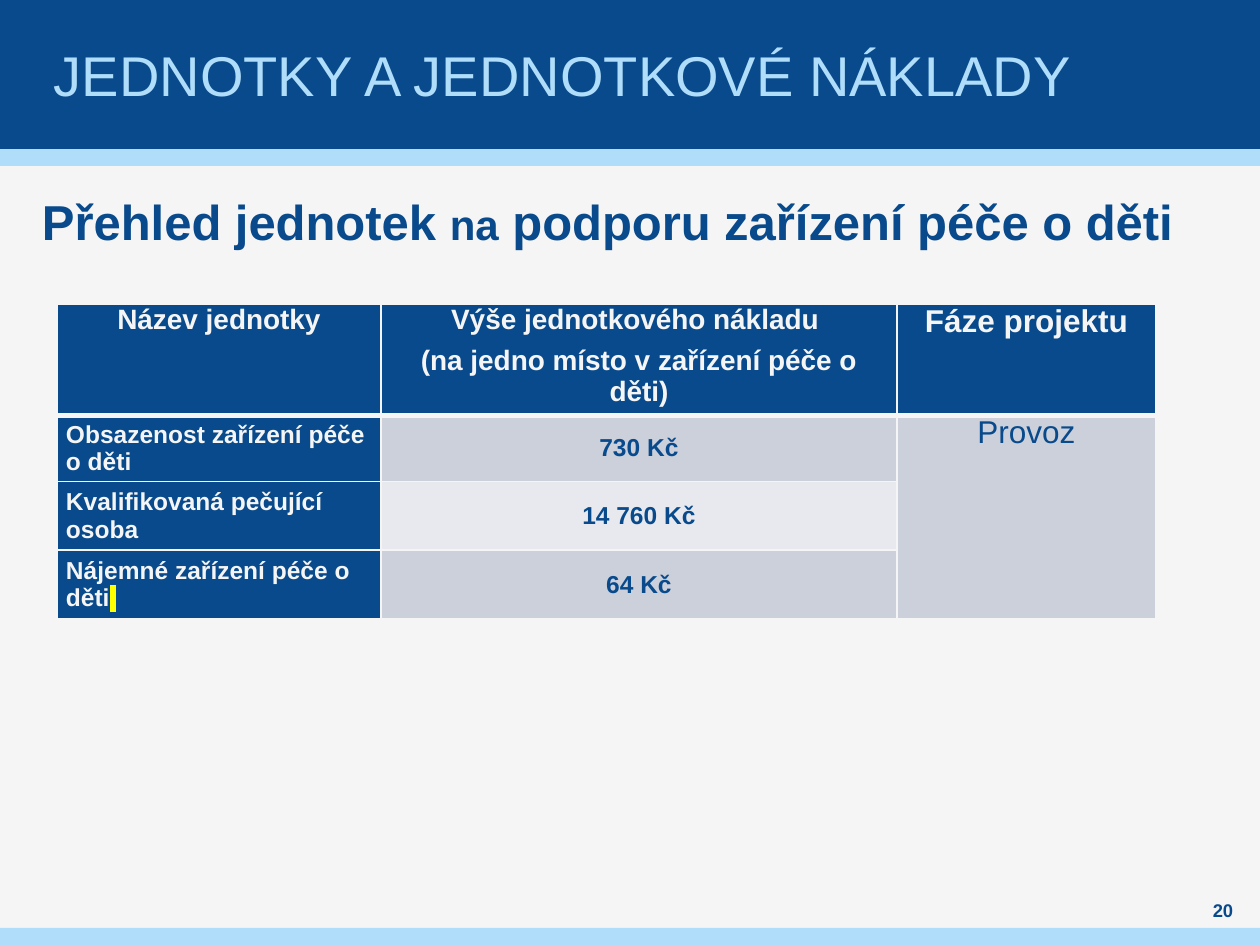
from lxml.etree import SubElement
from pptx import Presentation
from pptx.dml.color import RGBColor
from pptx.enum.shapes import MSO_SHAPE
from pptx.enum.text import MSO_ANCHOR, PP_ALIGN
from pptx.oxml import parse_xml
from pptx.oxml.ns import nsdecls, qn
from pptx.util import Pt

EMU_PER_PX = 914400 / 126
COLORS = {
    "navy": "084A8B",
    "sky": "AFDDFA",
    "paper": "F5F5F5",
    "band": "CCD0DA",
    "pale": "E7E9EE",
    "marker": "FFFF00",
}


def px(length):
    return round(length * EMU_PER_PX)


def rgb(name):
    return RGBColor.from_string(COLORS[name])


class SlideBuilder:
    font_name = "Arial"

    def __init__(self, slide):
        self.slide = slide
        background = slide.background.fill
        background.solid()
        background.fore_color.rgb = rgb("paper")

    def bar(self, left, top, width, height, color):
        bar = self.slide.shapes.add_shape(
            MSO_SHAPE.RECTANGLE, px(left), px(top), px(width), px(height))
        bar.shadow.inherit = False
        bar.fill.solid()
        bar.fill.fore_color.rgb = rgb(color)
        bar.line.fill.background()

    def fill_text(self, frame, paragraphs, align, size, color, bold=False, spacing=0):
        for index, runs in enumerate(paragraphs):
            paragraph = frame.paragraphs[0] if index == 0 else frame.add_paragraph()
            paragraph_format = {"alignment": align, "space_before": Pt(spacing),
                                "space_after": Pt(spacing)}
            for name, value in paragraph_format.items():
                setattr(paragraph, name, value)
            for text, changes in runs:
                run = paragraph.add_run()
                run.text = text
                font_format = {"name": self.font_name, "bold": bold,
                               "size": Pt(changes.get("size", size))}
                for name, value in font_format.items():
                    setattr(run.font, name, value)
                run.font.color.rgb = rgb(color)
                if "highlight" in changes:
                    self.highlight(run, changes["highlight"])

    def highlight(self, run, color):
        mark = parse_xml(
            f'<a:highlight {nsdecls("a")}><a:srgbClr val="{COLORS[color]}"/></a:highlight>')
        run.font._element.find(qn("a:solidFill")).addnext(mark)

    def text(self, left, top, width, height, runs, size, color, align=PP_ALIGN.CENTER,
             bold=True, anchor=MSO_ANCHOR.MIDDLE, inset=0):
        box = self.slide.shapes.add_textbox(px(left), px(top), px(width), px(height))
        frame_format = {"word_wrap": True, "vertical_anchor": anchor,
                        "margin_left": px(inset), "margin_right": px(inset),
                        "margin_top": 0, "margin_bottom": 0}
        for name, value in frame_format.items():
            setattr(box.text_frame, name, value)
        self.fill_text(box.text_frame, [runs], align, size, color, bold)

    def table(self, left, top, columns, rows):
        frame = self.slide.shapes.add_table(
            len(rows), len(columns), px(left), px(top), px(sum(columns)), px(sum(rows)))
        table = frame.table
        table.first_row = table.horz_banding = False
        for column, width in zip(table.columns, columns):
            column.width = px(width)
        for row, height in zip(table.rows, rows):
            row.height = px(height)
        return table

    def borders(self, cell, **widths):
        properties = cell._tc.get_or_add_tcPr()
        for side in "LRTB":
            line = SubElement(properties, qn(f"a:ln{side}"), w=str(Pt(widths.get(side, 1))))
            fill = SubElement(line, qn("a:solidFill"))
            SubElement(fill, qn("a:srgbClr"), val=COLORS["paper"])

    def cell(self, cell, paragraphs, fill, color, size, align=PP_ALIGN.CENTER,
             bold=True, anchor=MSO_ANCHOR.MIDDLE):
        cell_format = {"vertical_anchor": anchor, "margin_left": px(9),
                       "margin_right": px(9), "margin_top": 0, "margin_bottom": 0}
        for name, value in cell_format.items():
            setattr(cell, name, value)
        cell.fill.solid()
        cell.fill.fore_color.rgb = rgb(fill)
        self.fill_text(cell.text_frame, paragraphs, align, size, color, bold, spacing=3)


def main():
    presentation = Presentation()
    presentation.slide_width = px(1260)
    presentation.slide_height = px(945)
    builder = SlideBuilder(presentation.slides.add_slide(presentation.slide_layouts[6]))

    builder.bar(0, 149, 1260, 17, "sky")
    builder.bar(0, 0, 1260, 149, "navy")
    builder.bar(0, 928, 1260, 17, "sky")
    builder.text(49, 0, 1160, 149, [("JEDNOTKY A JEDNOTKOVÉ NÁKLADY", {})], 32, "sky",
                 align=PP_ALIGN.LEFT, bold=False, inset=5)
    builder.text(1191, 898, 64, 25, [("20", {})], 10.5, "navy")
    builder.text(25, 185, 1165, 72,
                 [("Přehled jednotek ", {}), ("na", {"size": 24}),
                  (" podporu zařízení péče o děti", {})], 28, "navy", inset=13)

    headings = [
        ([[("Název jednotky", {})]], 16),
        ([[("Výše jednotkového nákladu ", {})],
          [("(na jedno místo v zařízení péče o děti)", {})]], 16),
        ([[("Fáze projektu", {})]], 18),
    ]
    units = [
        ([("Obsazenost zařízení péče o děti", {})], "730 Kč"),
        ([("Kvalifikovaná pečující osoba", {})], "14 760 Kč"),
        ([("Nájemné zařízení péče o děti", {}), (" ", {"highlight": "marker"})], "64 Kč"),
    ]
    costs = builder.table(57, 304, [324, 516, 259], [110, 66, 69, 69])
    for row in range(len(units) + 1):
        for column in range(len(headings)):
            rule = {0: {"B": 3}, 1: {"T": 3}}.get(row, {})
            builder.borders(costs.cell(row, column), **rule)
    for column, (heading, size) in enumerate(headings):
        builder.cell(costs.cell(0, column), heading, "navy", "paper", size,
                     anchor=MSO_ANCHOR.TOP)
    for row, (unit, cost) in enumerate(units, start=1):
        builder.cell(costs.cell(row, 0), [unit], "navy", "paper", 14, align=PP_ALIGN.LEFT)
        builder.cell(costs.cell(row, 1), [[(cost, {})]], "band" if row % 2 else "pale",
                     "navy", 14)
    phase = costs.cell(1, 2)
    phase.merge(costs.cell(len(units), 2))
    builder.cell(phase, [[("Provoz", {})]], "band", "navy", 18, bold=False,
                 anchor=MSO_ANCHOR.TOP)

    presentation.save("out.pptx")


if __name__ == "__main__":
    main()
